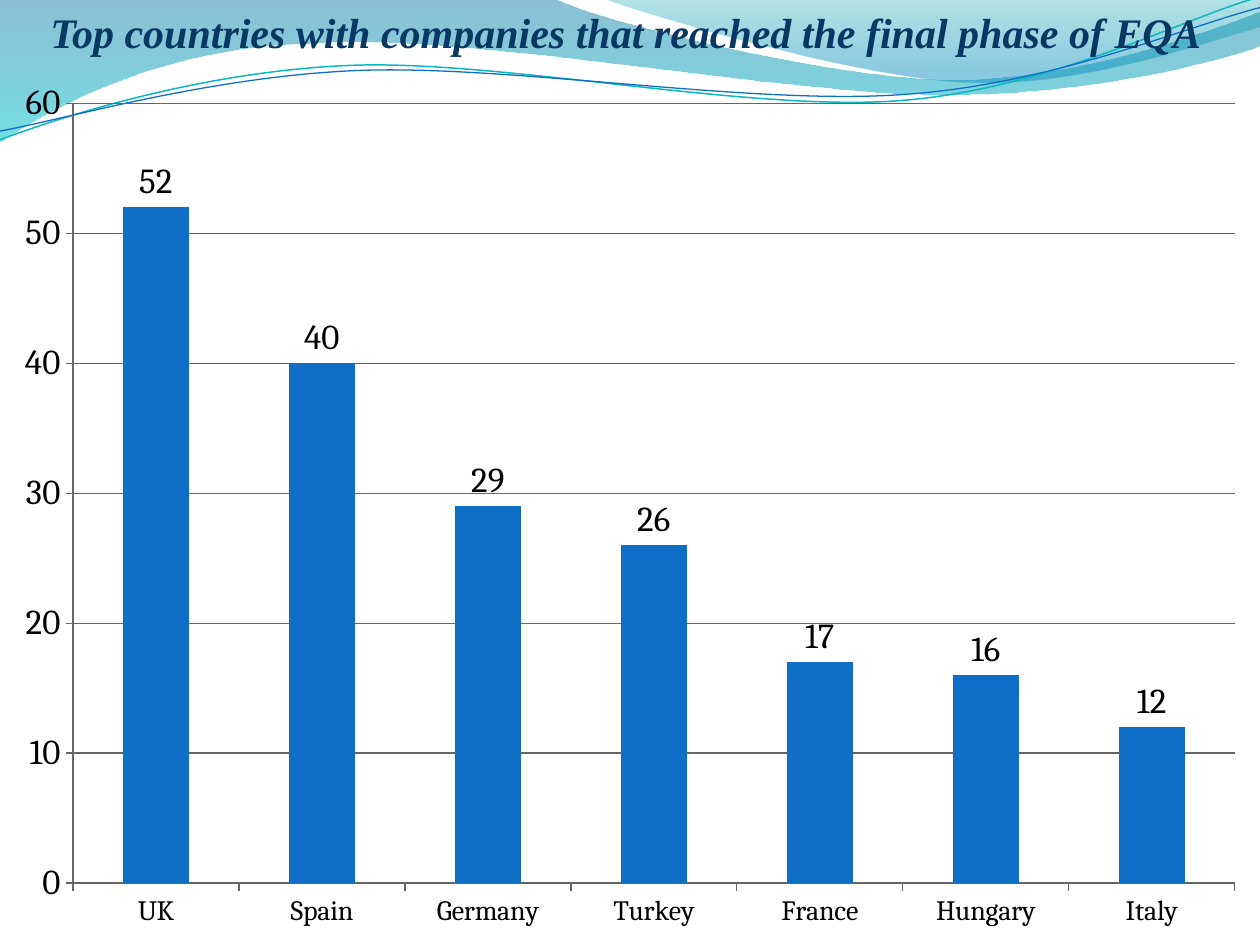
from dataclasses import dataclass
from math import cos, radians, sin
from typing import Any

from lxml.etree import SubElement
from pptx import Presentation
from pptx.chart.data import CategoryChartData
from pptx.dml.color import RGBColor
from pptx.enum.chart import XL_CHART_TYPE as ChartType
from pptx.enum.chart import XL_LABEL_POSITION as LabelPosition
from pptx.enum.chart import XL_TICK_MARK as TickMark
from pptx.enum.text import MSO_AUTO_SIZE as AutoSize
from pptx.enum.text import PP_ALIGN as Align
from pptx.oxml import parse_xml
from pptx.oxml.ns import nsdecls, qn
from pptx.util import Inches, Pt

COUNTRIES = {"UK": 52, "Spain": 40, "Germany": 29, "Turkey": 26,
             "France": 17, "Hungary": 16, "Italy": 12}
TILT = 357.3

WIDE_WAVE = [
    (0, 0), (4.4, -0.01), (4.76, 0.17, 6.64, 0.63, 7.58, 0.63),
    (8.53, 0.63, 9.58, 0.26, 10, 0.09), (10.01, 0.36),
    (9.83, 0.44, 8.7, 0.76, 7.46, 0.75), (6.22, 0.75, 3.82, 0.28, 2.57, 0.34),
    (1.29, 0.36, 0.46, 0.83, -0.01, 1.13), (0, 0),
]
RIGHT_WAVE = [
    (4.79, -0.01), (5.09, 0.11, 6.82, 0.62, 7.69, 0.65),
    (8.56, 0.69, 9.61, 0.32, 10, 0.21), (10, 0), (4.79, -0.01),
]
TEAL_LINE = [
    (0, 1.11), (0.48, 0.93, 1.58, 0.57, 2.77, 0.52),
    (3.95, 0.47, 5.93, 0.89, 7.13, 0.8), (8.33, 0.71, 9.38, 0.15, 9.98, -0.02),
]
BLUE_LINE = [
    (0, 1.04), (0.47, 0.96, 1.64, 0.61, 2.83, 0.56),
    (4.03, 0.51, 5.97, 0.84, 7.17, 0.75), (8.36, 0.67, 9.41, 0.21, 10, 0.06),
]


def color(value):
    return RGBColor.from_string(value)


def apply(target, values):
    for name, value in values.items():
        setattr(target, name, value)


def local_point(x, y, area, tilt):
    left, top, width, height = area
    dx, dy = x - left - width / 2, y - top - height / 2
    turn = radians(-tilt)
    return (Inches(width / 2 + dx * cos(turn) - dy * sin(turn)),
            Inches(height / 2 + dx * sin(turn) + dy * cos(turn)))


@dataclass
class SlideBuilder:
    """Holds the style and the current slide, and draws each kind of element."""
    page: Any
    chart_font: str = "Cambria"
    title_font: str = "Times New Roman"
    text: str = "000000"
    title: str = "083763"
    accent: str = "0F6FC6"
    grid: str = "666666"

    def outline(self, segments, area, close=False, tilt=0):
        anchors = [tuple(map(Inches, segment[-2:])) for segment in segments]
        builder = self.page.shapes.build_freeform(*anchors[0])
        builder.add_line_segments(anchors[1:], close=close)
        shape = builder.convert_to_shape()
        shape.shadow.inherit = False
        left, top, width, height = map(Inches, area)
        apply(shape, {"left": left, "top": top, "width": width, "height": height,
                      "rotation": tilt})
        track = shape.element.spPr.find(".//" + qn("a:path"))
        track.set("w", str(width))
        track.set("h", str(height))
        for old in list(track):
            track.remove(old)
        for index, segment in enumerate(segments):
            kind = "cubicBezTo" if len(segment) == 6 else "lnTo" if index else "moveTo"
            step = SubElement(track, qn("a:" + kind))
            for x, y in zip(segment[::2], segment[1::2]):
                spot = SubElement(step, qn("a:pt"))
                for name, value in zip("xy", local_point(x, y, area, tilt)):
                    spot.set(name, str(int(value)))
        if close:
            SubElement(track, qn("a:close"))
        return shape

    def wave(self, segments, area, stops):
        shape = self.outline(segments, area, close=True)
        shape.line.fill.background()
        shape.fill.gradient()
        shape.fill.gradient_angle = 270
        for stop, (position, value, _) in zip(shape.fill.gradient_stops, stops):
            stop.position = position
            stop.color.rgb = color(value)
        for node, (_, _, opacity) in zip(shape.element.spPr.iter(qn("a:srgbClr")), stops):
            SubElement(node, qn("a:alpha")).set("val", str(opacity * 1000))

    def curve(self, segments, area, value, width):
        shape = self.outline(segments, area, tilt=TILT)
        shape.fill.background()
        shape.line.color.rgb = color(value)
        shape.line.width = Pt(width)

    def heading(self, words, left, top, width, height):
        box = self.page.shapes.add_textbox(*map(Inches, (left, top, width, height)))
        apply(box.text_frame, {"word_wrap": True, "auto_size": AutoSize.SHAPE_TO_FIT_TEXT})
        para = box.text_frame.paragraphs[0]
        para.alignment = Align.CENTER
        span = para.add_run()
        span.text = words
        apply(span.font, {"name": self.title_font, "size": Pt(24), "bold": True, "italic": True})
        span.font.color.rgb = color(self.title)

    def font(self, target, size):
        apply(target.font, {"name": self.chart_font, "size": Pt(size), "bold": False})
        target.font.color.rgb = color(self.text)

    def columns(self, values, left, top, width, height):
        data = CategoryChartData()
        data.categories = list(values)
        data.add_series("Series 1", list(values.values()))
        chart = self.page.shapes.add_chart(
            ChartType.COLUMN_CLUSTERED, *map(Inches, (left, top, width, height)), data).chart
        apply(chart, {"has_legend": False, "has_title": False})
        self.font(chart, 10)
        plot = chart.plots[0]
        apply(plot, {"gap_width": 150, "vary_by_categories": False, "has_data_labels": True})
        apply(plot.data_labels, {"show_value": True, "position": LabelPosition.OUTSIDE_END})
        self.font(plot.data_labels, 20)
        bars = plot.series[0].format.fill
        bars.solid()
        bars.fore_color.rgb = color(self.accent)
        for axis, size in ((chart.category_axis, 16), (chart.value_axis, 20)):
            apply(axis, {"major_tick_mark": TickMark.OUTSIDE, "minor_tick_mark": TickMark.NONE})
            self.font(axis.tick_labels, size)
            axis.format.line.color.rgb = color(self.grid)
        apply(chart.value_axis, {"minimum_scale": 0, "maximum_scale": 60, "major_unit": 10})
        chart.value_axis.major_gridlines.format.line.color.rgb = color(self.grid)
        self.place_plot(chart, {"x": 0.58 / width, "y": (0.82 - top) / height,
                                "w": 9.22 / width, "h": 6.19 / height})

    def place_plot(self, chart, fractions):
        area = chart.element.find(".//" + qn("c:plotArea"))
        for old in area.findall(qn("c:layout")):
            area.remove(old)
        layout = parse_xml(f"<c:layout {nsdecls('c')}/>")
        manual = SubElement(layout, qn("c:manualLayout"))
        settings = {"layoutTarget": "inner", "xMode": "edge", "yMode": "edge", **fractions}
        for name, value in settings.items():
            SubElement(manual, qn("c:" + name)).set("val", str(value))
        area.insert(0, layout)


def main():
    deck = Presentation()
    apply(deck, {"slide_width": Inches(10), "slide_height": Inches(7.5)})
    slide = SlideBuilder(deck.slides.add_slide(deck.slide_layouts[6]))
    slide.wave(WIDE_WAVE, (-0.01, -0.01, 10.02, 1.14),
               [(0, "0074A1", 45), (1, "00C6CF", 55)])
    slide.wave(RIGHT_WAVE, (4.79, -0.01, 5.21, 0.7),
               [(0, "00A1A9", 30), (0.8, "008BBF", 45)])
    slide.curve(TEAL_LINE, (-0.02, 0.22, 10.02, 0.71), "0AB8BF", 0.85)
    slide.curve(BLUE_LINE, (-0.02, 0.3, 10.03, 0.58), slide.accent, 0.75)
    slide.columns(COUNTRIES, 0, 0.52, 10, 6.98)
    slide.heading("Top countries with companies that reached the final phase of EQA ",
                  0, 0, 10, 0.5)
    deck.save("out.pptx")


if __name__ == "__main__":
    main()
